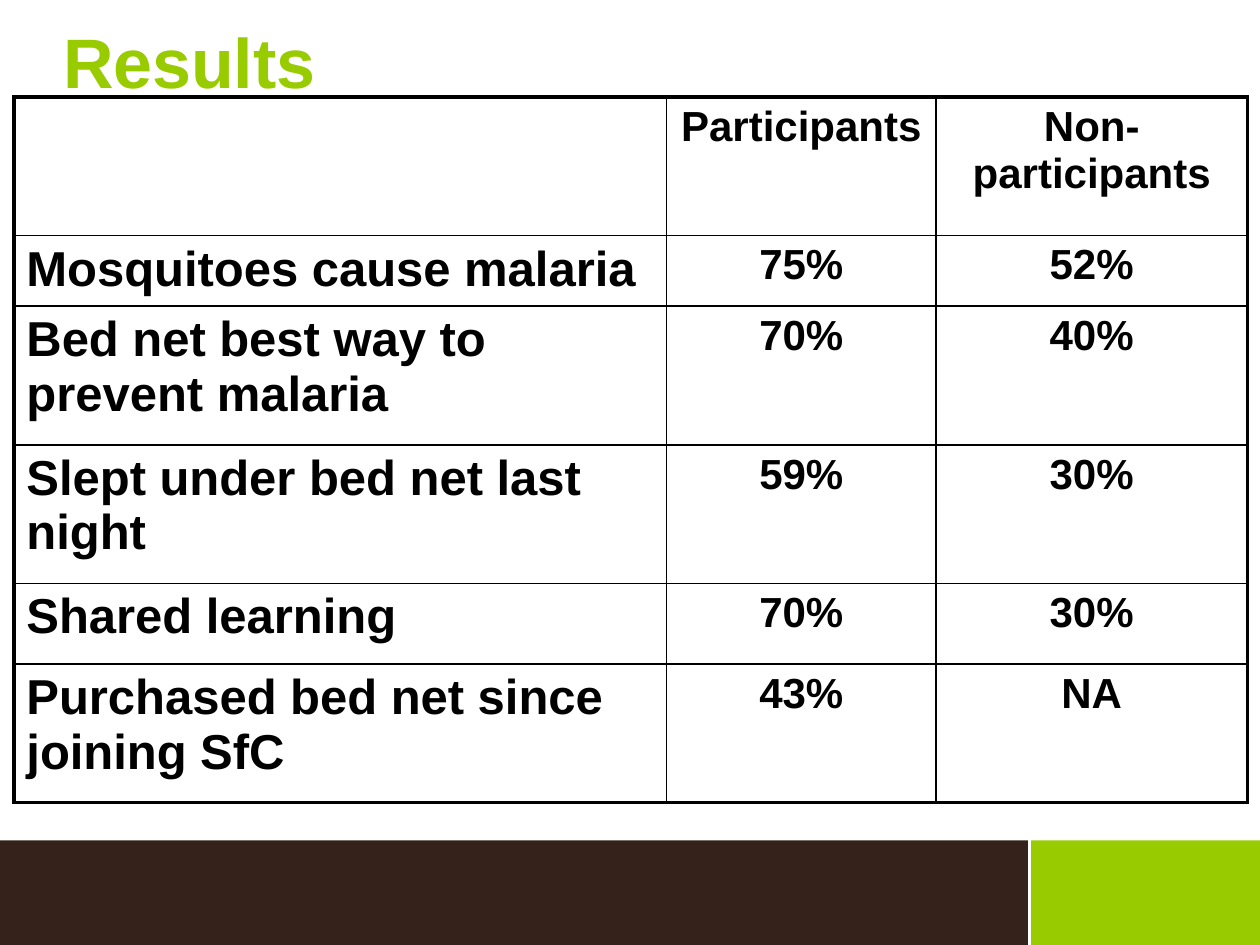
from lxml import etree
from pptx import Presentation
from pptx.dml.color import RGBColor
from pptx.enum.shapes import MSO_CONNECTOR, MSO_SHAPE
from pptx.enum.text import MSO_ANCHOR, MSO_AUTO_SIZE, PP_ALIGN
from pptx.oxml.ns import qn
from pptx.util import Inches, Pt

RECTANGLE, STRAIGHT = MSO_SHAPE.RECTANGLE, MSO_CONNECTOR.STRAIGHT
TOP, NO_FIT = MSO_ANCHOR.TOP, MSO_AUTO_SIZE.NONE
LEFT, CENTER = PP_ALIGN.LEFT, PP_ALIGN.CENTER

WIDTH, HEIGHT = 10, 7.5
GREEN, BROWN, WHITE, BLACK = "99CC00", "35231B", "FFFFFF", "000000"
BAND_TOP, BAND_SPLIT = 6.67 / HEIGHT, 8.17 / WIDTH
THIN, THICK = 1, 2.25

RESULTS = [
    ("", "Participants", "Non-participants"),
    ("Mosquitoes cause malaria", "75%", "52%"),
    ("Bed net best way to prevent malaria", "70%", "40%"),
    ("Slept under bed net last night", "59%", "30%"),
    ("Shared learning", "70%", "30%"),
    ("Purchased bed net since joining SfC", "43%", "NA"),
]
COLUMN_WIDTHS = [5.18, 2.14, 2.47]
ROW_HEIGHTS = [1.1, 0.56, 1.1, 1.1, 0.64, 1.1]


def color(code):
    return RGBColor.from_string(code)


def apply(target, values):
    for key, value in values.items():
        setattr(target, key, value)


class Deck:
    font = {"name": "Arial", "bold": True}

    def __init__(self):
        self.presentation = Presentation()
        apply(self.presentation, {"slide_width": Inches(WIDTH), "slide_height": Inches(HEIGHT)})
        self.slide = self.presentation.slides.add_slide(self.presentation.slide_layouts[5])
        background = self.slide.background.fill
        background.solid()
        background.fore_color.rgb = color(WHITE)

    def box(self, x, y, w, h):
        return [Inches(WIDTH * x), Inches(HEIGHT * y), Inches(WIDTH * w), Inches(HEIGHT * h)]

    def label(self, frame, text, size, ink, alignment):
        paragraph = frame.paragraphs[0]
        paragraph.alignment = alignment
        run = paragraph.add_run()
        run.text = text
        apply(run.font, {**self.font, "size": Pt(size)})
        run.font.color.rgb = color(ink)

    def title(self, text, *share):
        heading = self.slide.shapes.title
        apply(heading, dict(zip(("left", "top", "width", "height"), self.box(*share))))
        apply(heading.text_frame, {
            "margin_left": 0, "margin_right": 0, "margin_bottom": 0,
            "margin_top": Inches(0.07), "vertical_anchor": TOP,
            "auto_size": NO_FIT, "word_wrap": True,
        })
        self.label(heading.text_frame, text, 40, GREEN, LEFT)

    def band(self, fill, *share):
        band = self.slide.shapes.add_shape(RECTANGLE, *self.box(*share))
        band.shadow.inherit = False
        band.fill.solid()
        band.fill.fore_color.rgb = color(fill)
        band.line.fill.background()

    def divider(self, x, top, bottom):
        ends = [Inches(WIDTH * x), Inches(HEIGHT * top), Inches(WIDTH * x), Inches(HEIGHT * bottom)]
        divider = self.slide.shapes.add_connector(STRAIGHT, *ends)
        divider.line.width = Pt(1.5)
        divider.line.color.rgb = color(WHITE)
        etree.SubElement(divider._element.spPr, qn("a:effectLst"))

    def borders(self, cell, widths):
        properties = cell._tc.get_or_add_tcPr()
        for position, (side, width) in enumerate(widths.items()):
            line = etree.Element(qn(f"a:ln{side}"), w=str(Pt(width)))
            fill = etree.SubElement(line, qn("a:solidFill"))
            etree.SubElement(fill, qn("a:srgbClr"), val=BLACK)
            properties.insert(position, line)

    def table(self, rows, widths, heights, x, y):
        share = (x, y, sum(widths) / WIDTH, sum(heights) / HEIGHT)
        table = self.slide.shapes.add_table(len(rows), len(widths), *self.box(*share)).table
        apply(table, {"first_row": False, "horz_banding": False})
        for column, width in zip(table.columns, widths):
            column.width = Inches(width)
        for row, height in zip(table.rows, heights):
            row.height = Inches(height)
        last_row, last_column = len(rows) - 1, len(widths) - 1
        for r, values in enumerate(rows):
            for c, value in enumerate(values):
                cell = table.cell(r, c)
                cell.fill.background()
                self.borders(cell, {
                    "L": THIN if c else THICK,
                    "R": THICK if c == last_column else THIN,
                    "T": THIN if r else THICK,
                    "B": THICK if r == last_row else THIN,
                })
                if value:
                    size, alignment = (24, CENTER) if c else (28, LEFT)
                    self.label(cell.text_frame, value, size, BLACK, alignment)


def main():
    deck = Deck()
    deck.band(GREEN, BAND_SPLIT, BAND_TOP, 1 - BAND_SPLIT, 1 - BAND_TOP)
    deck.band(BROWN, 0, BAND_TOP, BAND_SPLIT, 1 - BAND_TOP)
    deck.divider(BAND_SPLIT, BAND_TOP, 1)
    deck.title("Results", 0.05, 0.08 / HEIGHT, 0.9, 0.92 / HEIGHT)
    deck.table(RESULTS, COLUMN_WIDTHS, ROW_HEIGHTS, 0.11 / WIDTH, 0.77 / HEIGHT)
    deck.presentation.save("out.pptx")


if __name__ == "__main__":
    main()
